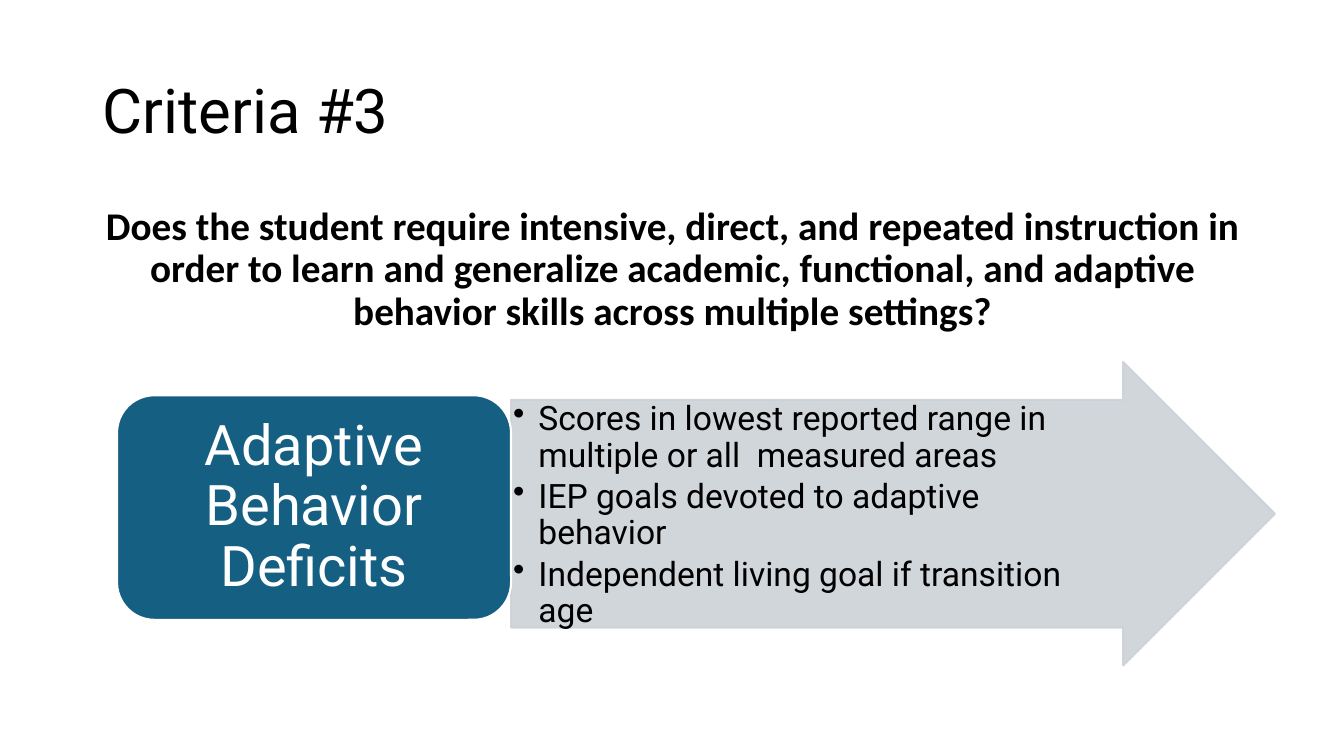
from lxml import etree
from pptx import Presentation
from pptx.dml.color import RGBColor
from pptx.enum.shapes import MSO_SHAPE
from pptx.enum.text import MSO_ANCHOR, MSO_AUTO_SIZE, PP_ALIGN
from pptx.oxml.ns import qn
from pptx.util import Cm, Pt

ARROW, ROUND = MSO_SHAPE.RIGHT_ARROW, MSO_SHAPE.ROUNDED_RECTANGLE
TOP, MIDDLE = MSO_ANCHOR.TOP, MSO_ANCHOR.MIDDLE
LEFT, CENTER = PP_ALIGN.LEFT, PP_ALIGN.CENTER
NO_FIT = MSO_AUTO_SIZE.NONE
COLORS = {"text": "000000", "white": "FFFFFF", "blue": "156082", "gray": "CCD2D8"}


def write(shape, lines, size, face, color, align, anchor, bold=False, bullet=None):
    frame = shape.text_frame
    frame.word_wrap = True
    frame.auto_size = NO_FIT
    frame.vertical_anchor = anchor
    frame.text = "\n".join(lines)
    for para in frame.paragraphs:
        props = para._p.get_or_add_pPr()
        indent = Cm(0.64) if bullet else 0
        props.set("marL", str(indent))
        props.set("indent", str(-indent))
        mark = etree.SubElement(props, qn("a:buChar" if bullet else "a:buNone"))
        if bullet:
            mark.set("char", bullet)
        para.alignment = align
        para.line_spacing = 0.9
        para.space_before = Pt(0)
        para.space_after = Pt(3.6 if bullet else 0)
        font = para.font
        font.name, font.size, font.bold = face, Pt(size), bold
        font.color.rgb = RGBColor.from_string(COLORS[color])


def draw(kind, box, fill, line, pads):
    shape = slide.shapes.add_shape(kind, *map(Cm, box))
    shape.shadow.inherit = False
    shape.fill.solid()
    shape.fill.fore_color.rgb = RGBColor.from_string(COLORS[fill])
    shape.line.color.rgb = RGBColor.from_string(COLORS[line])
    shape.line.width = Pt(1.5)
    frame = shape.text_frame
    frame.margin_left, frame.margin_top, frame.margin_right, frame.margin_bottom = map(Cm, pads)
    return shape


deck = Presentation()
deck.slide_width, deck.slide_height = Cm(33.87), Cm(19.05)
slide = deck.slides.add_slide(deck.slide_layouts[1])

# Title and question
title, body = slide.placeholders
for holder, box in ((title, (2.34, 1.02, 29.21, 3.68)), (body, (2.34, 5.08, 29.21, 12.09))):
    holder.left, holder.top, holder.width, holder.height = map(Cm, box)
write(title, ["Criteria #3"], 44, "Roboto", "text", LEFT, MIDDLE)
write(body, ["Does the student require intensive, direct, and repeated instruction in order to "
             "learn and generalize academic, functional, and adaptive behavior skills across "
             "multiple settings?"], 28, "Calibri", "text", CENTER, TOP, bold=True)

# Arrow with the evidence list
arrow = draw(ARROW, (12.88, 9.12, 19.25, 7.65), "gray", "gray", (0.05, 0.05, 1.95, 0.05))
arrow.adjustments[0], arrow.adjustments[1] = 0.75, 0.5
for tint in arrow._element.spPr.iter(qn("a:srgbClr")):
    etree.SubElement(tint, qn("a:alpha")).set("val", "90000")
write(arrow, ["Scores in lowest reported range in multiple or all  measured areas",
              "IEP goals devoted to adaptive behavior",
              "Independent living goal if transition age"],
      24, "Roboto", "text", LEFT, TOP, bullet="•")

# Criterion label
label = draw(ROUND, (2.95, 9.96, 9.93, 5.66), "blue", "white", (0.43, 0.2, 0.43, 0.2))
write(label, ["Adaptive Behavior Deficits"], 40, "Roboto", "white", CENTER, MIDDLE)

deck.save("out.pptx")
